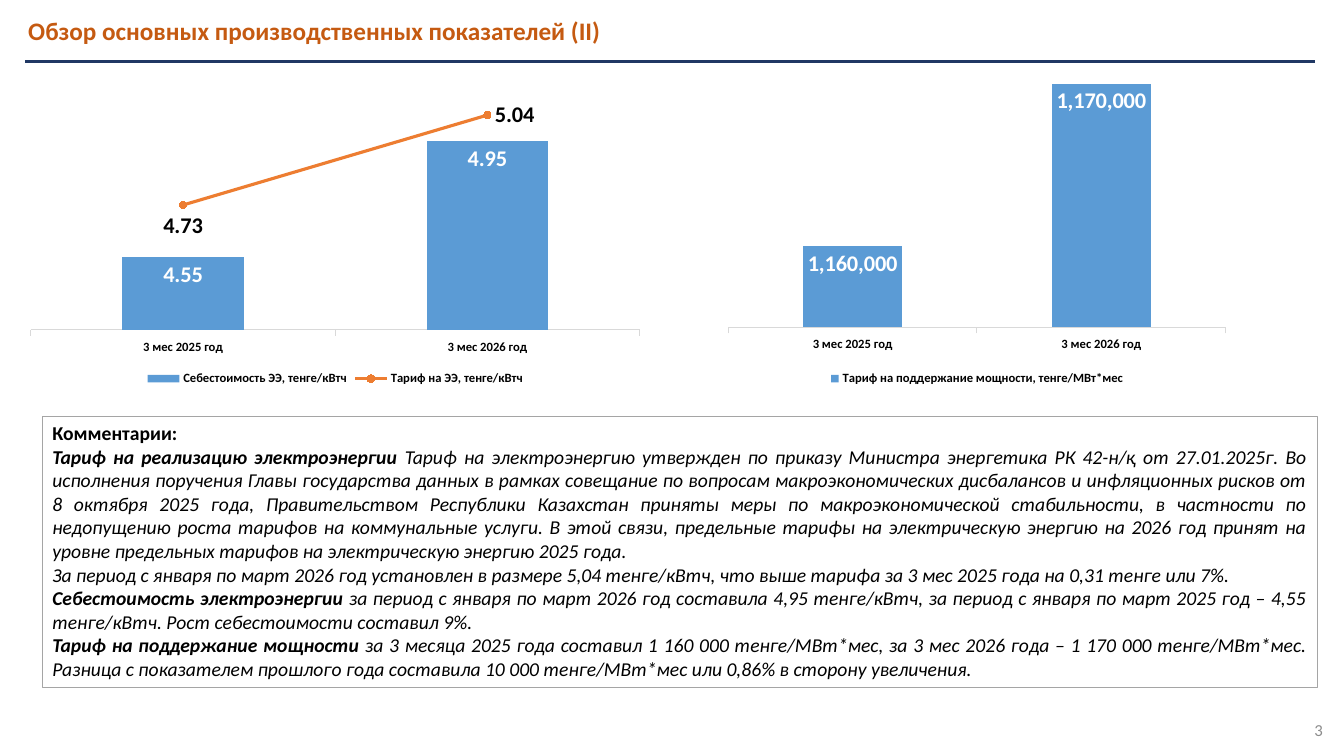
from lxml import etree
from pptx import Presentation
from pptx.chart.data import CategoryChartData
from pptx.dml.color import RGBColor
from pptx.enum.chart import (XL_CHART_TYPE, XL_LABEL_POSITION, XL_LEGEND_POSITION,
                             XL_MARKER_STYLE, XL_TICK_LABEL_POSITION, XL_TICK_MARK)
from pptx.enum.shapes import MSO_CONNECTOR, MSO_SHAPE
from pptx.enum.text import MSO_ANCHOR, MSO_AUTO_SIZE, PP_ALIGN
from pptx.oxml import parse_xml
from pptx.oxml.ns import nsdecls, qn
from pptx.util import Inches, Pt

COLORS = {"title": "C55A11", "rule": "203864", "text": "000000", "number": "8C8C8C",
          "border": "A5A5A5", "axis": "D9D9D9", "bar": "5B9BD5", "line": "ED7D31",
          "bar_label": "FFFFFF"}
FONT = "Calibri"
PERIODS = ["3 мес 2025 год", "3 мес 2026 год"]
COLUMNS = XL_CHART_TYPE.COLUMN_CLUSTERED
INSIDE_END, BELOW, RIGHT = (XL_LABEL_POSITION.INSIDE_END, XL_LABEL_POSITION.BELOW,
                            XL_LABEL_POSITION.RIGHT)


def style(font, size, color, bold=False, italic=False):
    font.name = FONT
    font.size = Pt(size)
    font.bold = bold
    font.italic = italic
    font.color.rgb = RGBColor.from_string(COLORS[color])


def add_column_chart(box, series, number_format, low, high, step, plot_area):
    data = CategoryChartData(number_format=number_format)
    data.categories = PERIODS
    for name, values in series:
        data.add_series(name, values)
    chart = slide.shapes.add_chart(COLUMNS, *map(Inches, box), data).chart
    style(chart.font, 10, "text")
    chart.has_title = False
    chart.has_legend = True
    chart.legend.position = XL_LEGEND_POSITION.BOTTOM
    chart.legend.include_in_layout = False
    style(chart.legend.font, 9, "text", bold=True)

    # Axes
    periods_axis, values_axis = chart.category_axis, chart.value_axis
    periods_axis.major_tick_mark = XL_TICK_MARK.OUTSIDE
    periods_axis.tick_label_position = XL_TICK_LABEL_POSITION.LOW
    periods_axis.format.line.color.rgb = RGBColor.from_string(COLORS["axis"])
    periods_axis.format.line.width = Pt(0.75)
    style(periods_axis.tick_labels.font, 9, "text", bold=True)
    values_axis.has_major_gridlines = False
    values_axis.minimum_scale, values_axis.maximum_scale = low, high
    values_axis.major_unit = step
    values_axis.visible = False

    # Columns and their labels
    plot = chart.plots[0]
    plot.gap_width = 150
    plot.vary_by_categories = False
    columns = plot.series[0]
    columns.format.fill.solid()
    columns.format.fill.fore_color.rgb = RGBColor.from_string(COLORS["bar"])
    labels = columns.data_labels
    labels.show_value = True
    labels.number_format = number_format
    labels.number_format_is_linked = False
    labels.position = INSIDE_END
    style(labels.font, 16, "bar_label", bold=True)

    # Inner plot area as fractions of the chart
    area = chart._chartSpace.chart.plotArea
    for layout in area.findall(qn("c:layout")):
        area.remove(layout)
    fractions = "".join(f'<c:{key} val="{value}"/>' for key, value in zip("xywh", plot_area))
    area.insert(0, parse_xml(
        f'<c:layout {nsdecls("c")}><c:manualLayout><c:layoutTarget val="inner"/>'
        f'<c:xMode val="edge"/><c:yMode val="edge"/>{fractions}</c:manualLayout></c:layout>'))
    return chart


prs = Presentation()
prs.slide_width, prs.slide_height = Inches(13.33), Inches(7.5)
slide = prs.slides.add_slide(prs.slide_layouts[5])

# Title and rule
title = slide.shapes.title
title.left, title.top, title.width, title.height = map(Inches, (0.18, 0.04, 12.93, 0.57))
title.text_frame.vertical_anchor = MSO_ANCHOR.MIDDLE
title.text_frame.auto_size = MSO_AUTO_SIZE.NONE
heading = title.text_frame.paragraphs[0]
heading.alignment = PP_ALIGN.LEFT
heading.line_spacing = 0.9
heading_run = heading.add_run()
heading_run.text = "Обзор основных производственных показателей (II)"
style(heading_run.font, 18, "title", bold=True)

rule = slide.shapes.add_connector(MSO_CONNECTOR.STRAIGHT, Inches(0.25), Inches(0.61),
                                  Inches(13.04), Inches(0.61))
rule.line.color.rgb = RGBColor.from_string(COLORS["rule"])
rule.line.width = Pt(1.5)
etree.SubElement(rule._element.spPr, qn("a:effectLst"))

# Cost and tariff chart
energy_chart = add_column_chart(
    (0.18, 0.88, 6.29, 2.99),
    [("Себестоимость ЭЭ, тенге/кВтч", (4.55, 4.95)), ("Тариф на ЭЭ, тенге/кВтч", (4.73, 5.04))],
    "#,##0.00", 4.3, 5.1, 0.1, (0.02, 0.03, 0.96, 0.77))

# The tariff series moves to a line plot on the same axes
bar_plot = energy_chart._chartSpace.chart.plotArea.find(qn("c:barChart"))
tariff_xml = bar_plot.findall(qn("c:ser"))[1]
for inverted in tariff_xml.findall(qn("c:invertIfNegative")):
    tariff_xml.remove(inverted)
line_plot = parse_xml(f'<c:lineChart {nsdecls("c")}><c:grouping val="standard"/>'
                      '<c:varyColors val="0"/></c:lineChart>')
line_plot.append(tariff_xml)
etree.SubElement(line_plot, qn("c:marker")).set("val", "1")
for axis_id in bar_plot.findall(qn("c:axId")):
    etree.SubElement(line_plot, qn("c:axId")).set("val", axis_id.get("val"))
bar_plot.addnext(line_plot)

tariff = energy_chart.plots[1].series[0]
tariff.smooth = False
tariff.format.line.color.rgb = RGBColor.from_string(COLORS["line"])
tariff.format.line.width = Pt(2.25)
tariff.marker.style = XL_MARKER_STYLE.CIRCLE
tariff.marker.size = 5
tariff.marker.format.fill.solid()
tariff.marker.format.fill.fore_color.rgb = RGBColor.from_string(COLORS["line"])
tariff.marker.format.line.color.rgb = RGBColor.from_string(COLORS["line"])
tariff.data_labels.show_value = True
style(tariff.data_labels.font, 16, "text", bold=True)
for index, position in enumerate((BELOW, RIGHT)):
    point_label = tariff.points[index].data_label
    style(point_label.font, 16, "text", bold=True)
    point_label.position = position

# Capacity tariff chart
add_column_chart((7.12, 0.77, 5.14, 3.1),
                 [("Тариф на поддержание мощности, тенге/МВт*мес", (1160000, 1170000))],
                 "#,##0", 1155000, 1170000, 5000, (0.02, 0.02, 0.96, 0.78))

# Comments: each paragraph is a bold lead and an italic text
COMMENTS = [
    ("Комментарии:", ""),
    ("Тариф на реализацию электроэнергии ",
     "Тариф на электроэнергию утвержден по приказу Министра энергетика РК 42-н/қ от 27.01.2025г. "
     "Во исполнения поручения Главы государства данных в рамках совещание по вопросам "
     "макроэкономических дисбалансов и инфляционных рисков от 8 октября 2025 года, "
     "Правительством Республики Казахстан приняты меры по макроэкономической стабильности, "
     "в частности по недопущению роста тарифов на коммунальные услуги. В этой связи, предельные "
     "тарифы на электрическую энергию на 2026 год принят на уровне предельных тарифов на "
     "электрическую энергию 2025 года."),
    ("", "За период с января по март 2026 год установлен в размере 5,04 тенге/кВтч, что выше "
         "тарифа за 3 мес 2025 года на 0,31 тенге или 7%."),
    ("Себестоимость электроэнергии ",
     "за период с января по март 2026 год составила 4,95 тенге/кВтч, за период с января по март "
     "2025 год – 4,55 тенге/кВтч. Рост себестоимости составил 9%."),
    ("Тариф на поддержание мощности ",
     "за 3 месяца 2025 года составил 1 160 000 тенге/МВт*мес, за 3 мес 2026 года – 1 170 000 "
     "тенге/МВт*мес. Разница с показателем прошлого года составила 10 000 тенге/МВт*мес или "
     "0,86% в сторону увеличения."),
]
comments = slide.shapes.add_shape(MSO_SHAPE.RECTANGLE, *map(Inches, (0.42, 4.13, 12.65, 2.69)))
comments.shadow.inherit = False
comments.fill.background()
comments.line.color.rgb = RGBColor.from_string(COLORS["border"])
comments.line.width = Pt(0.75)
comments.text_frame.word_wrap = True
comments.text_frame.auto_size = MSO_AUTO_SIZE.SHAPE_TO_FIT_TEXT
comments.text_frame.vertical_anchor = MSO_ANCHOR.TOP
for number, (lead, body) in enumerate(COMMENTS):
    paragraph = (comments.text_frame.add_paragraph() if number
                 else comments.text_frame.paragraphs[0])
    paragraph.alignment = PP_ALIGN.JUSTIFY
    for text, bold in ((lead, True), (body, False)):
        if text:
            run = paragraph.add_run()
            run.text = text
            style(run.font, 14, "text", bold=bold, italic=number > 0)

# Slide number
page = slide.shapes.add_textbox(*map(Inches, (10.22, 7.04, 3, 0.4))).text_frame
page.word_wrap = True
page.vertical_anchor = MSO_ANCHOR.MIDDLE
page.paragraphs[0].alignment = PP_ALIGN.RIGHT
page_run = page.paragraphs[0].add_run()
page_run.text = "3"
style(page_run.font, 12, "number")

prs.save("out.pptx")
